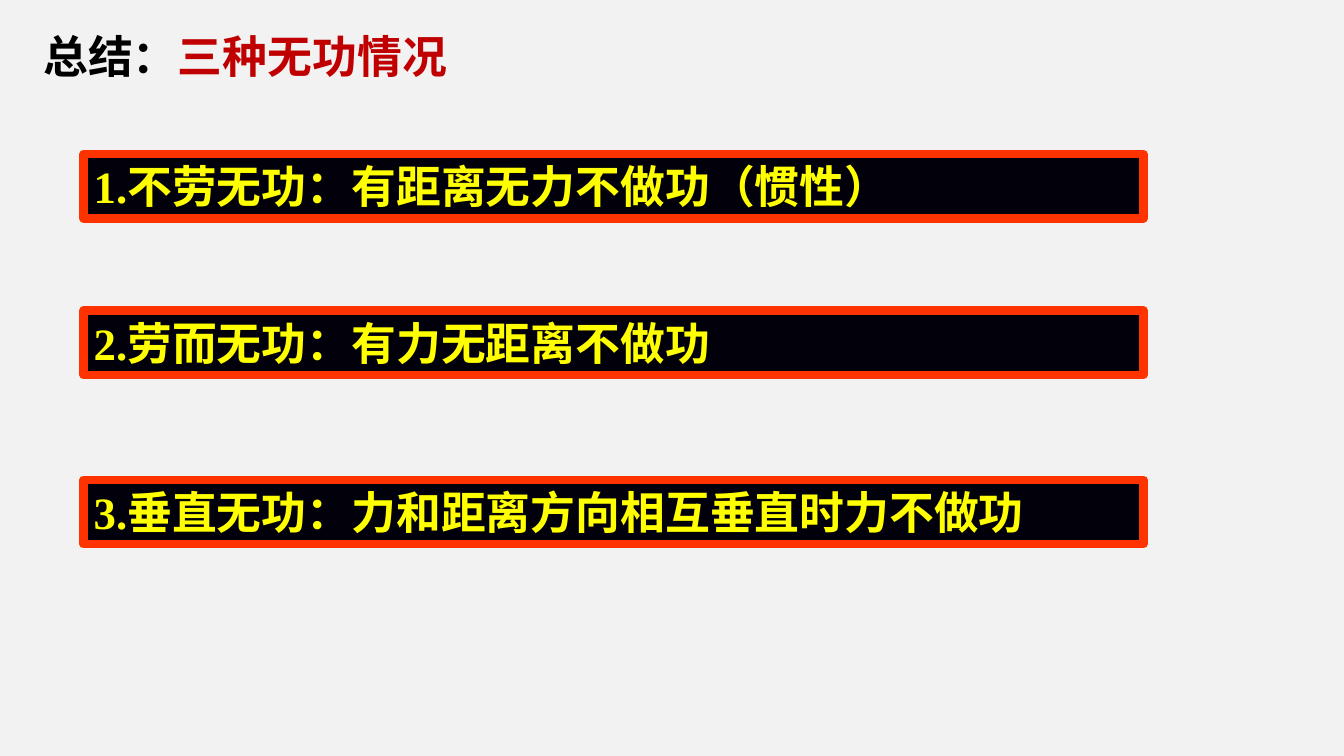
import pptx
import pptx.dml.color
import pptx.enum.shapes
import pptx.enum.text
import pptx.oxml
import pptx.oxml.ns
import pptx.util
from dataclasses import dataclass

Inches = pptx.util.Inches


@dataclass
class Theme:
    background: str = "F2F2F2"
    title: str = "000000"
    accent: str = "C00000"
    bar_fill: str = "02010B"
    bar_line: str = "FF3300"
    bar_text: str = "FFFF00"
    size: int = 32
    line_width: int = 6
    latin: str = "Times New Roman"
    cjk: str = "Noto Sans CJK SC"


def rgb(value):
    return pptx.dml.color.RGBColor.from_string(value)


class SummarySlide:
    def __init__(self, prs, theme):
        self.theme = theme
        self.s = prs.slides.add_slide(prs.slide_layouts[5])
        fill = self.s.background.fill
        fill.solid()
        fill.fore_color.rgb = rgb(theme.background)

    def frame(self, sp):
        """Left-aligned text at the top of a shape that fits its text."""
        tf = sp.text_frame
        formats = {
            "word_wrap": True,
            "auto_size": pptx.enum.text.MSO_AUTO_SIZE.SHAPE_TO_FIT_TEXT,
            "vertical_anchor": pptx.enum.text.MSO_ANCHOR.TOP,
        }
        for name, value in formats.items():
            setattr(tf, name, value)
        p = tf.paragraphs[0]
        p.alignment = pptx.enum.text.PP_ALIGN.LEFT
        return p

    def run(self, p, text, color, latin):
        r = p.add_run()
        r.text = text
        formats = {"size": pptx.util.Pt(self.theme.size), "bold": True, "name": latin}
        for name, value in formats.items():
            setattr(r.font, name, value)
        r.font.color.rgb = rgb(color)
        # East Asian typeface follows the Latin one
        ea = pptx.oxml.parse_xml(
            f'<a:ea {pptx.oxml.ns.nsdecls("a")} typeface="{self.theme.cjk}"/>')
        r.font._element.find(pptx.oxml.ns.qn("a:latin")).addnext(ea)

    def title(self, parts, left, top, width, height):
        sp = self.s.shapes.title
        box = {"left": left, "top": top, "width": width, "height": height}
        for name, value in box.items():
            setattr(sp, name, Inches(value))
        p = self.frame(sp)
        for text, color in parts:
            self.run(p, text, color, self.theme.cjk)

    def bar(self, text, left, top, width, height):
        sp = self.s.shapes.add_shape(
            pptx.enum.shapes.MSO_SHAPE.RECTANGLE,
            *map(Inches, (left, top, width, height)))
        sp.shadow.inherit = False
        sp.fill.solid()
        sp.fill.fore_color.rgb = rgb(self.theme.bar_fill)
        sp.line.color.rgb = rgb(self.theme.bar_line)
        sp.line.width = pptx.util.Pt(self.theme.line_width)
        self.run(self.frame(sp), text, self.theme.bar_text, self.theme.latin)


def main():
    prs = pptx.Presentation()
    prs.slide_width, prs.slide_height = Inches(13.33), Inches(7.5)
    theme = Theme()
    slide = SummarySlide(prs, theme)

    # Heading
    slide.title([("总结：", theme.title), ("三种无功情况", theme.accent)],
                0.33, 0.23, 10.26, 0.64)

    # Three cases in which no work is done
    cases = [
        (1.53, "不劳无功：有距离无力不做功（惯性）"),
        (3.08, "劳而无功：有力无距离不做功"),
        (4.76, "垂直无功：力和距离方向相互垂直时力不做功"),
    ]
    for number, (top, text) in enumerate(cases, 1):
        slide.bar(f"{number}.{text}", 0.83, top, 10.51, 0.64)

    prs.save("out.pptx")


if __name__ == "__main__":
    main()
